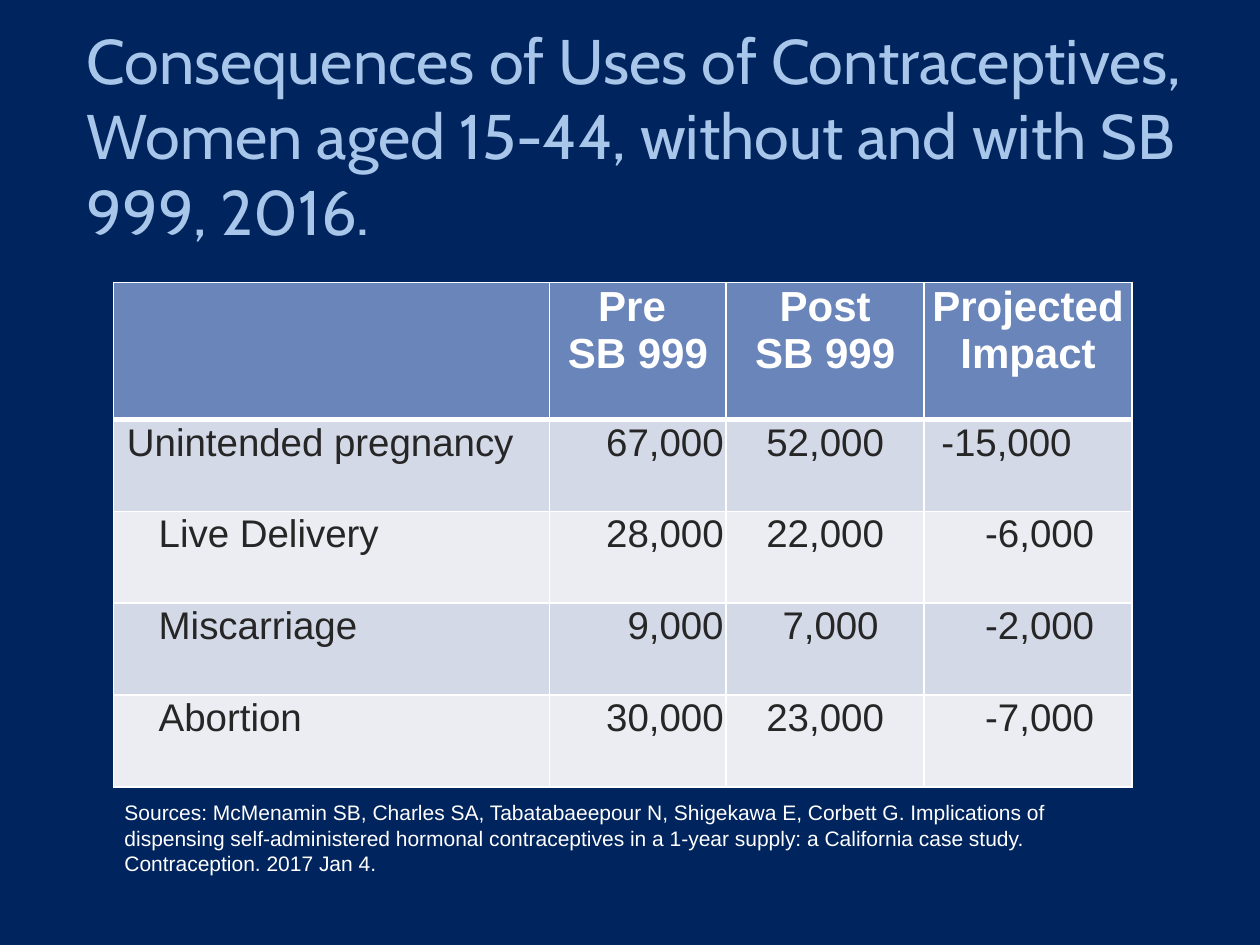
from dataclasses import dataclass

from lxml.etree import SubElement
from pptx import Presentation
from pptx.dml.color import RGBColor
from pptx.enum.text import PP_ALIGN
from pptx.oxml.ns import qn
from pptx.util import Cm, Pt


@dataclass(frozen=True)
class Theme:
    background: str = "00245D"
    title: str = "A8C6EA"
    white: str = "FFFFFF"
    body: str = "262626"
    header_fill: str = "6A85BA"
    bands: tuple = ("D4D9E7", "EBEDF3")
    title_font: str = "Cabin"
    body_font: str = "Arial"
    title_size: int = 36
    header_size: int = 24
    body_size: int = 22
    source_size: int = 12


THEME = Theme()
COLUMN_WIDTHS = (8.79, 3.56, 3.99, 4.19)
HEADER_HEIGHT, ROW_HEIGHT = 2.77, 1.85
HEADERS = ("", "Pre \vSB 999", " Post \vSB 999", "Projected Impact")
ROWS = (
    ("Unintended pregnancy", "67,000", "52,000", "-15,000"),
    ("Live Delivery", "28,000", "22,000", "-6,000"),
    ("Miscarriage", "9,000", "7,000", "-2,000"),
    ("Abortion", "30,000", "23,000", "-7,000"),
)
ALIGNMENTS = (PP_ALIGN.LEFT, PP_ALIGN.RIGHT, PP_ALIGN.CENTER, PP_ALIGN.CENTER)
INSET = 0.05
# (left, right) cell margins that differ from INSET, by (row, column)
SHIFTS = {
    (0, 0): (0.27, INSET),
    (1, 0): (0.91, INSET),
    (2, 0): (0.91, INSET),
    (3, 0): (0.91, INSET),
    (2, 2): (0.27, INSET),
    (0, 3): (0.3, 1.17),
    (1, 3): (0.52, INSET),
    (2, 3): (0.52, INSET),
    (3, 3): (0.52, INSET),
}


def style_text(tf, font, size, color, bold=False, align=PP_ALIGN.LEFT):
    for p in tf.paragraphs:
        p.alignment = align
        for r in p.runs:
            r.font.name = font
            r.font.size = Pt(size)
            r.font.bold = bold
            r.font.color.rgb = RGBColor.from_string(color)


def add_text(s, box, text, font, size, color):
    sp = s.shapes.add_textbox(*(Cm(v) for v in box))
    tf = sp.text_frame
    tf.word_wrap = True
    tf.text = text
    style_text(tf, font, size, color)


def set_borders(cell, bottom):
    """Draw white cell borders, 1 pt except for the bottom one."""
    tcPr = cell._tc.get_or_add_tcPr()
    widths = {"a:lnL": 1, "a:lnR": 1, "a:lnT": 1, "a:lnB": bottom}
    for i, (tag, width) in enumerate(widths.items()):
        ln = SubElement(tcPr, qn(tag), w=str(Pt(width)))
        fill = SubElement(ln, qn("a:solidFill"))
        SubElement(fill, qn("a:srgbClr"), val=THEME.white)
        tcPr.insert(i, ln)


def fill_cell(cell, text, fill, size, color, bold, align, margins, bottom=1):
    cell.fill.solid()
    cell.fill.fore_color.rgb = RGBColor.from_string(fill)
    cell.margin_left, cell.margin_right = (Cm(m) for m in margins)
    cell.margin_top = cell.margin_bottom = Cm(0.03)
    cell.text_frame.text = text
    style_text(cell.text_frame, THEME.body_font, size, color, bold, align)
    set_borders(cell, bottom)


def add_impact_table(s):
    height = HEADER_HEIGHT + ROW_HEIGHT * len(ROWS)
    table = s.shapes.add_table(
        len(ROWS) + 1, len(HEADERS),
        Cm(2.29), Cm(5.69), Cm(sum(COLUMN_WIDTHS)), Cm(height),
    ).table
    for column, width in zip(table.columns, COLUMN_WIDTHS):
        column.width = Cm(width)
    for i, row in enumerate(table.rows):
        row.height = Cm(ROW_HEIGHT if i else HEADER_HEIGHT)

    for c, text in enumerate(HEADERS):
        fill_cell(table.cell(0, c), text, THEME.header_fill, THEME.header_size,
                  THEME.white, True, PP_ALIGN.CENTER, (INSET, INSET), bottom=3)
    for i, values in enumerate(ROWS):
        for c, text in enumerate(values):
            fill_cell(table.cell(i + 1, c), text, THEME.bands[i % 2],
                      THEME.body_size, THEME.body, False, ALIGNMENTS[c],
                      SHIFTS.get((i, c), (INSET, INSET)))


def main():
    prs = Presentation()
    prs.slide_width, prs.slide_height = Cm(25.4), Cm(19.05)
    s = prs.slides.add_slide(prs.slide_layouts[6])
    s.background.fill.solid()
    s.background.fill.fore_color.rgb = RGBColor.from_string(THEME.background)

    add_text(s, (1.5, 0.3, 23.34, 4.88),
             "Consequences of Uses of Contraceptives, Women aged 15-44, "
             "without and with SB 999, 2016.",
             THEME.title_font, THEME.title_size, THEME.title)
    add_impact_table(s)
    add_text(s, (2.26, 16, 20.57, 1.8),
             "Sources: McMenamin SB, Charles SA, Tabatabaeepour N, Shigekawa E, "
             "Corbett G. Implications of dispensing self-administered hormonal "
             "contraceptives in a 1-year supply: a California case study. "
             "Contraception. 2017 Jan 4.",
             THEME.body_font, THEME.source_size, THEME.white)
    prs.save("out.pptx")


if __name__ == "__main__":
    main()
